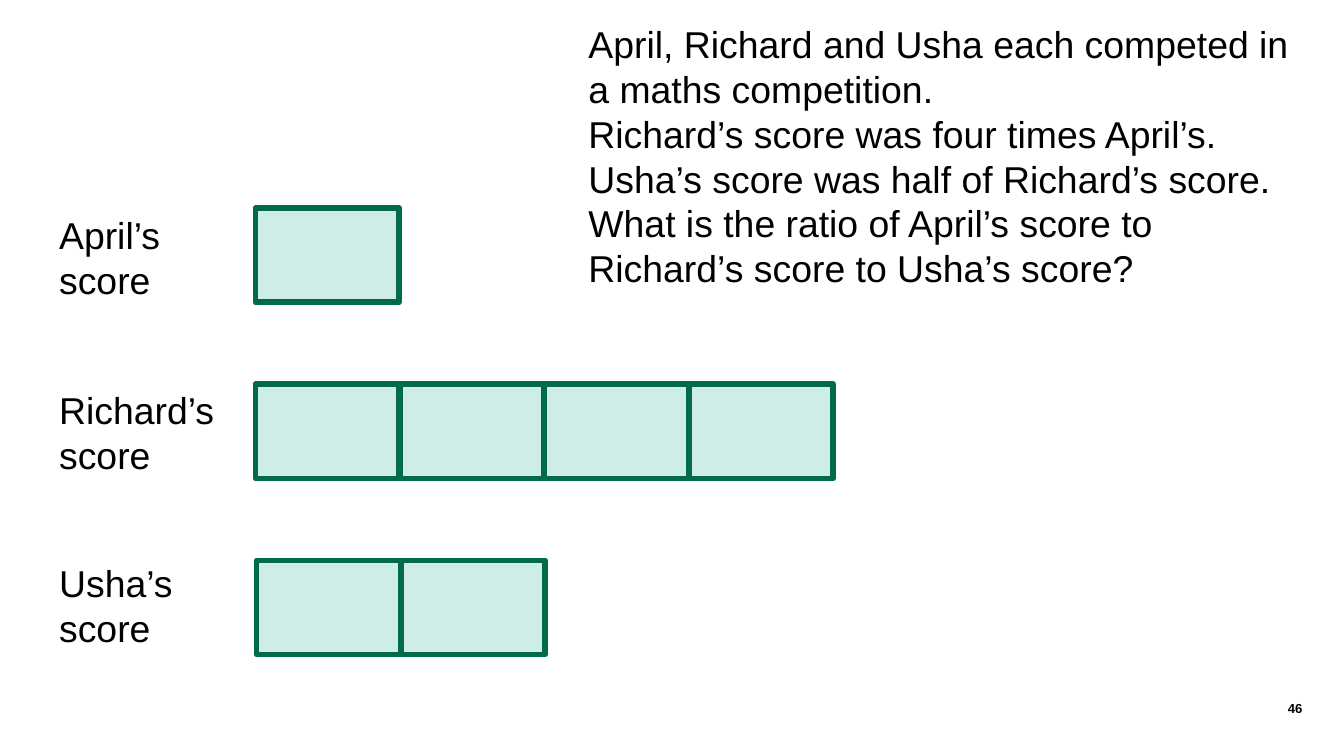
"""Build a bar-model slide comparing three competition scores as a ratio."""
from dataclasses import dataclass

from pptx import Presentation
from pptx.dml.color import RGBColor
from pptx.enum.shapes import MSO_SHAPE
from pptx.enum.text import PP_ALIGN
from pptx.slide import Slide
from pptx.text.text import TextFrame
from pptx.util import Inches, Pt

BLACK = RGBColor(0x00, 0x00, 0x00)
MINT = RGBColor(0xCF, 0xED, 0xE7)
GREEN = RGBColor(0x00, 0x6C, 0x47)

SLIDE_WIDTH = Inches(10)
SLIDE_HEIGHT = SLIDE_WIDTH * 9 // 16
LABEL_LEFT = 0.44
UNIT_WIDTH = 1.07
UNIT_PITCH = 3.23 / 3
UNIT_HEIGHT = 0.7

QUESTION = [
    "April, Richard and Usha each competed in a maths competition.",
    "Richard’s score was four times April’s.",
    "Usha’s score was half of Richard’s score.",
    "What is the ratio of April’s score to Richard’s score to Usha’s score?",
]


@dataclass(frozen=True)
class Score:
    label: str
    units: int
    bar_top: float
    label_top: float
    label_width: float = 1.07
    bar_left: float = 1.9


SCORES = [
    Score("April’s score", 1, 1.55, 1.58),
    Score("Richard’s score", 4, 2.86, 2.88, label_width=1.24),
    Score("Usha’s score", 2, 4.17, 4.17, bar_left=1.91),
]


def add_text(slide: Slide, text: str, left: float, top: float, width: float,
             height: float, size: float = 20, inset: bool = False) -> TextFrame:
    box = slide.shapes.add_textbox(Inches(left), Inches(top), Inches(width), Inches(height))
    frame = box.text_frame
    frame.word_wrap = True
    if not inset:
        frame.margin_left = frame.margin_right = Inches(0)
        frame.margin_top = frame.margin_bottom = Inches(0)
    frame.text = text
    for paragraph in frame.paragraphs:
        for run in paragraph.runs:
            run.font.name = "Arial"
            run.font.size = Pt(size)
            run.font.color.rgb = BLACK
    return frame


def add_bar(slide: Slide, score: Score) -> None:
    for index in range(score.units):
        unit = slide.shapes.add_shape(
            MSO_SHAPE.RECTANGLE, Inches(score.bar_left + index * UNIT_PITCH),
            Inches(score.bar_top), Inches(UNIT_WIDTH), Inches(UNIT_HEIGHT))
        unit.shadow.inherit = False
        unit.fill.solid()
        unit.fill.fore_color.rgb = MINT
        unit.line.color.rgb = GREEN
        unit.line.width = Pt(3)


def main() -> None:
    deck = Presentation()
    deck.slide_width, deck.slide_height = SLIDE_WIDTH, SLIDE_HEIGHT
    slide = deck.slides.add_slide(deck.slide_layouts[6])

    page_number = add_text(slide, "46", 8.7, 5.21, 0.99, 0.3, size=7)
    page_number.paragraphs[0].alignment = PP_ALIGN.RIGHT
    page_number.paragraphs[0].runs[0].font.bold = True

    for score in SCORES:
        add_bar(slide, score)
        add_text(slide, score.label, LABEL_LEFT, score.label_top, score.label_width, 0.67)

    add_text(slide, "\n".join(QUESTION), 4.28, 0.11, 5.49, 2.12, inset=True)
    deck.save("out.pptx")


if __name__ == "__main__":
    main()
